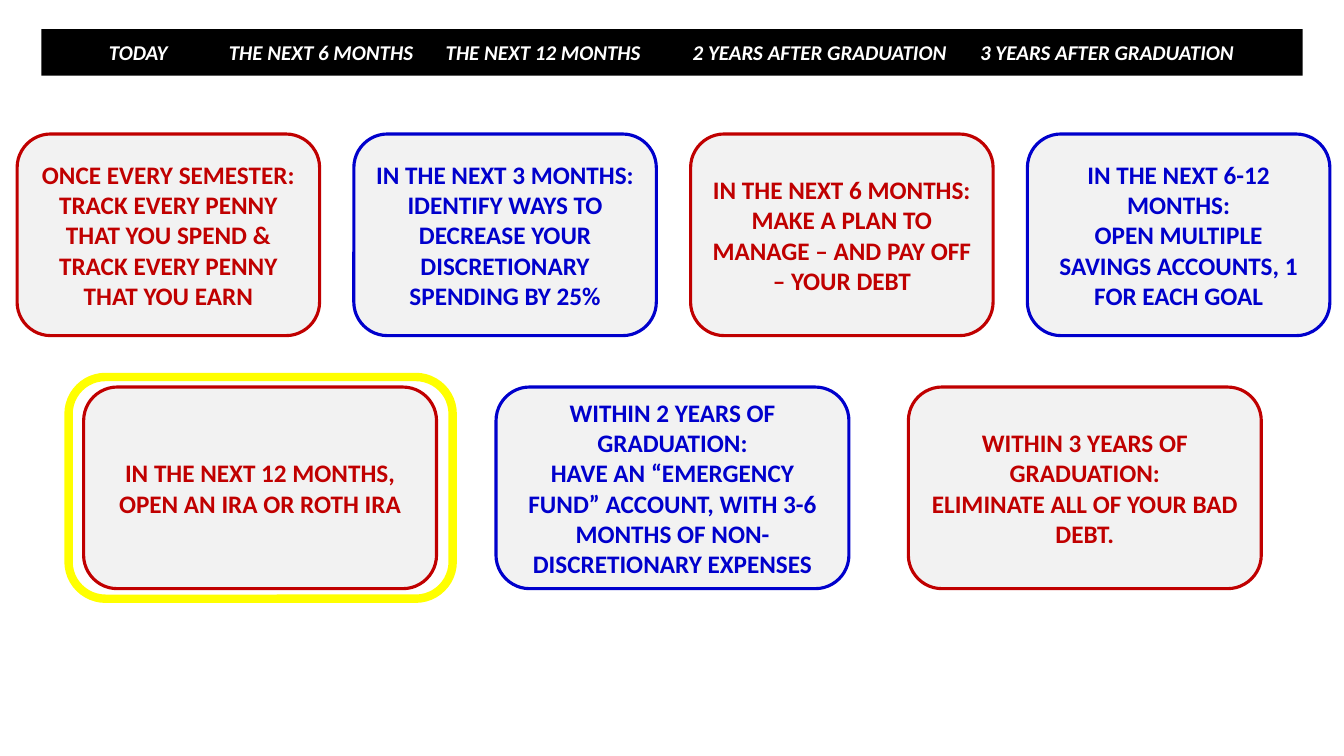
"""Build a timeline slide of money goals from today to three years after graduation."""
from dataclasses import dataclass

from lxml.etree import SubElement
from pptx import Presentation
from pptx.dml.color import RGBColor
from pptx.enum.shapes import MSO_SHAPE
from pptx.enum.text import MSO_ANCHOR, PP_ALIGN
from pptx.oxml.ns import qn
from pptx.util import Inches, Pt


@dataclass(frozen=True)
class Theme:
    font: str = "Calibri"
    black: RGBColor = RGBColor(0x00, 0x00, 0x00)
    white: RGBColor = RGBColor(0xFF, 0xFF, 0xFF)
    card: RGBColor = RGBColor(0xF2, 0xF2, 0xF2)
    red: RGBColor = RGBColor(0xC0, 0x00, 0x00)
    blue: RGBColor = RGBColor(0x00, 0x00, 0xCC)
    yellow: RGBColor = RGBColor(0xFF, 0xFF, 0x00)
    header_size: Pt = Pt(15)
    card_size: Pt = Pt(18)
    card_line: Pt = Pt(2.25)
    highlight_line: Pt = Pt(6)


theme = Theme()
presentation = Presentation()
presentation.slide_width = Inches(13.33)
presentation.slide_height = Inches(7.5)
slide = presentation.slides.add_slide(presentation.slide_layouts[6])


def add_box(kind, left, top, width, height, fill=None, line=None, line_width=None):
    shape = slide.shapes.add_shape(
        kind, Inches(left), Inches(top), Inches(width), Inches(height))
    shape.shadow.inherit = False
    if fill is None:
        shape.fill.background()
    else:
        shape.fill.solid()
        shape.fill.fore_color.rgb = fill
    if line is None:
        shape.line.fill.background()
    else:
        shape.line.color.rgb = line
        shape.line.width = line_width
    return shape


def write_paragraph(paragraph, text, alignment, size, color):
    paragraph.text = text
    paragraph.alignment = alignment
    paragraph.font.name = theme.font
    paragraph.font.size = size
    paragraph.font.bold = True
    paragraph.font.color.rgb = color


periods = ["TODAY", "THE NEXT 6 MONTHS", "THE NEXT 12 MONTHS",
           "2 YEARS AFTER GRADUATION", "3 YEARS AFTER GRADUATION"]
period_tabs = [1.19, 3.34, 5.79, 8.64]

header = add_box(MSO_SHAPE.RECTANGLE, 0.41, 0.29, 12.51, 0.46, fill=theme.black)
header.text_frame.margin_left = Inches(0.67)
header.text_frame.vertical_anchor = MSO_ANCHOR.MIDDLE
paragraph = header.text_frame.paragraphs[0]
tab_list = SubElement(paragraph._p.get_or_add_pPr(), qn("a:tabLst"))
for position in period_tabs:
    SubElement(tab_list, qn("a:tab"), pos=str(Inches(position)), algn="l")
write_paragraph(paragraph, "\t".join(periods), PP_ALIGN.LEFT,
                theme.header_size, theme.white)
paragraph.font.italic = True

near_goals = [
    ["ONCE EVERY SEMESTER:",
     "TRACK EVERY PENNY THAT YOU SPEND & TRACK EVERY PENNY THAT YOU EARN"],
    ["IN THE NEXT 3 MONTHS:",
     "IDENTIFY WAYS TO DECREASE YOUR DISCRETIONARY SPENDING BY 25%"],
    ["IN THE NEXT 6 MONTHS:",
     "MAKE A PLAN TO MANAGE – AND PAY OFF – YOUR DEBT"],
    ["IN THE NEXT 6-12 MONTHS:",
     "OPEN MULTIPLE SAVINGS ACCOUNTS, 1 FOR EACH GOAL"],
]
later_goals = [
    ["IN THE NEXT 12 MONTHS, OPEN AN IRA OR ROTH IRA"],
    ["WITHIN 2 YEARS OF GRADUATION:",
     "HAVE AN “EMERGENCY FUND” ACCOUNT, WITH 3-6 MONTHS OF "
     "NON-DISCRETIONARY EXPENSES"],
    ["WITHIN 3 YEARS OF GRADUATION:",
     "ELIMINATE ALL OF YOUR BAD DEBT."],
]
goal_rows = [
    (near_goals, 0.17, 1.33, 3, 3.34),
    (later_goals, 0.83, 3.84, 3.5, 4.09),
]

for goals, left, top, width, pitch in goal_rows:
    for column, lines in enumerate(goals):
        color = theme.blue if column % 2 else theme.red
        card = add_box(MSO_SHAPE.ROUNDED_RECTANGLE, left + column * pitch, top,
                       width, 2, theme.card, color, theme.card_line)
        frame = card.text_frame
        frame.word_wrap = True
        frame.vertical_anchor = MSO_ANCHOR.MIDDLE
        for number, line in enumerate(lines):
            paragraph = frame.add_paragraph() if number else frame.paragraphs[0]
            write_paragraph(paragraph, line, PP_ALIGN.CENTER,
                            theme.card_size, color)

add_box(MSO_SHAPE.ROUNDED_RECTANGLE, 0.68, 3.74, 3.81, 2.2,
        line=theme.yellow, line_width=theme.highlight_line)

presentation.save("out.pptx")
